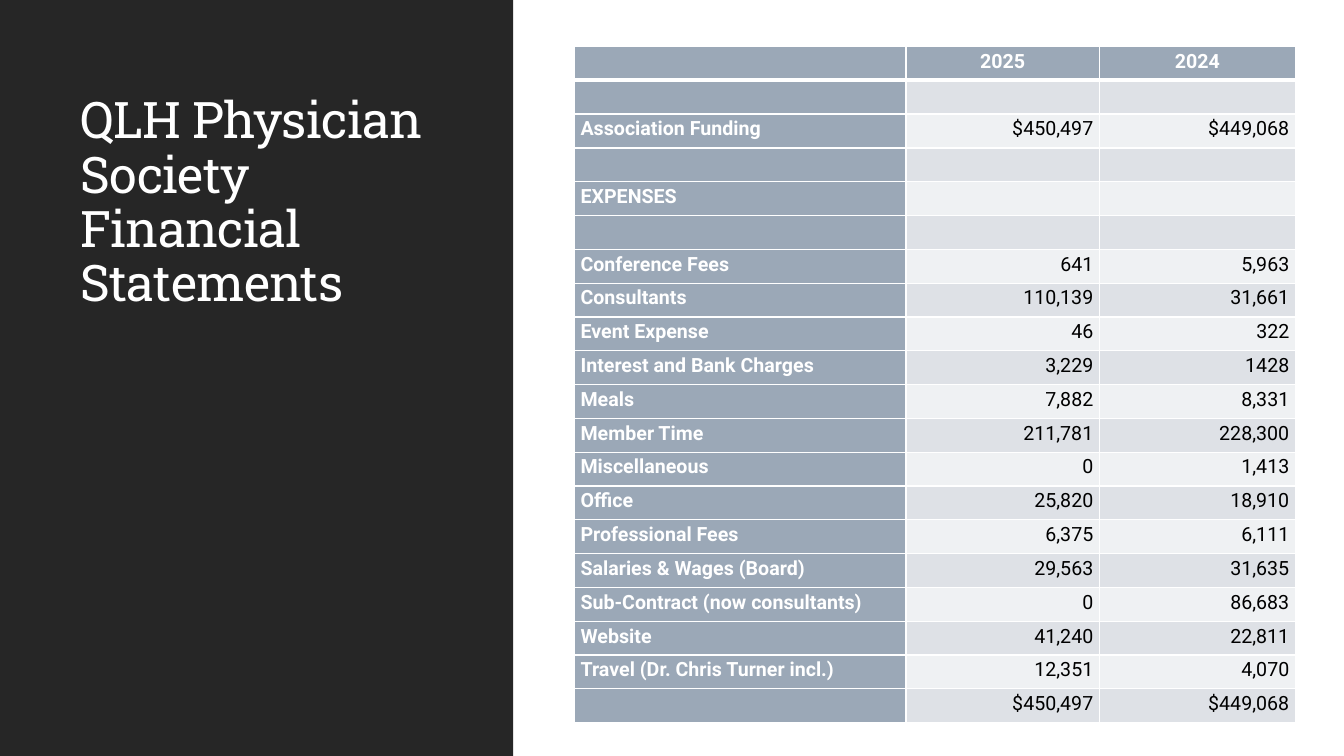
from lxml import etree
from pptx import Presentation
from pptx import util as u
from pptx.dml import color
from pptx.enum import shapes, text
from pptx.oxml import ns

ROWS = [
    ("", "2025", "2024"),
    ("", "", ""),
    ("Association Funding", "$450,497", "$449,068"),
    ("", "", ""),
    ("EXPENSES", "", ""),
    ("", "", ""),
    ("Conference Fees", "641", "5,963"),
    ("Consultants", "110,139", "31,661"),
    ("Event Expense", "46", "322"),
    ("Interest and Bank Charges", "3,229", "1428"),
    ("Meals", "7,882", "8,331"),
    ("Member Time", "211,781", "228,300"),
    ("Miscellaneous", "0", "1,413"),
    ("Office", "25,820", "18,910"),
    ("Professional Fees", "6,375", "6,111"),
    ("Salaries & Wages (Board)", "29,563", "31,635"),
    ("Sub-Contract (now consultants)", "0", "86,683"),
    ("Website", "41,240", "22,811"),
    ("Travel (Dr. Chris Turner incl.)", "12,351", "4,070"),
    ("", "$450,497", "$449,068"),
]


def rgb(value):
    return color.RGBColor.from_string(value)


class Deck:
    dark, white, black = "262626", "FFFFFF", "000000"
    accent, bands = "9BA8B7", ("EFF1F3", "DEE1E6")
    title_font, body_font = "Roboto Slab", "Roboto"

    def __init__(self, prs):
        self.s = prs.slides.add_slide(prs.slide_layouts[6])

    def panel(self, x, y, w, h):
        sp = self.s.shapes.add_shape(
            shapes.MSO_SHAPE.RECTANGLE, u.Pt(x), u.Pt(y), u.Pt(w), u.Pt(h))
        sp.shadow.inherit = False
        sp.fill.solid()
        sp.fill.fore_color.rgb = rgb(self.dark)
        sp.line.fill.background()

    def style(self, p, font, size, fill, bold=False):
        for r in p.runs:
            r.font.name = font
            r.font.size = u.Pt(size)
            r.font.bold = bold
            r.font.color.rgb = rgb(fill)

    def title(self, x, y, w, h, words):
        tf = self.s.shapes.add_textbox(
            u.Pt(x), u.Pt(y), u.Pt(w), u.Pt(h)).text_frame
        tf.word_wrap = True
        tf.vertical_anchor = text.MSO_ANCHOR.BOTTOM
        tf.text = words
        p = tf.paragraphs[0]
        p.line_spacing = 0.9
        p.space_after = u.Pt(6)
        self.style(p, self.title_font, 36, self.white)
        for r in p.runs:
            r.font._element.set("spc", "-50")

    def border(self, cell, side, width):
        tc_pr = cell._tc.get_or_add_tcPr()
        ln = etree.SubElement(tc_pr, ns.qn(f"a:ln{side}"), w=str(u.Pt(width)))
        fill = etree.SubElement(ln, ns.qn("a:solidFill"))
        etree.SubElement(fill, ns.qn("a:srgbClr"), val=self.white)

    def cell(self, cell, words, row, col):
        heading = row == 0 or col == 0
        cell.margin_left = cell.margin_right = u.Pt(4.3)
        cell.margin_top = cell.margin_bottom = 0
        for side in "LRTB":
            self.border(cell, side, 3 if (row, side) == (0, "B") else 1)
        cell.fill.solid()
        cell.fill.fore_color.rgb = rgb(self.accent if heading else self.bands[row % 2])
        if not words:
            return
        cell.text_frame.text = words
        p = cell.text_frame.paragraphs[0]
        p.line_spacing = 1.15
        p.space_after = u.Pt(8)
        if row == 0:
            p.alignment = text.PP_ALIGN.CENTER
        elif col:
            p.alignment = text.PP_ALIGN.RIGHT
        self.style(p, self.body_font, 14,
                   self.white if heading else self.black, heading)

    def table(self, x, y, widths, h, rows):
        tbl = self.s.shapes.add_table(
            len(rows), len(widths), u.Pt(x), u.Pt(y),
            u.Pt(sum(widths)), u.Pt(h)).table
        tbl.first_col = True
        for column, width in zip(tbl.columns, widths):
            column.width = u.Pt(width)
        for i, row in enumerate(rows):
            tbl.rows[i].height = u.Pt(h / len(rows))
            for j, words in enumerate(row):
                self.cell(tbl.cell(i, j), words, i, j)


def main():
    prs = Presentation()
    prs.slide_width, prs.slide_height = u.Pt(960), u.Pt(540)
    deck = Deck(prs)
    deck.panel(0, 0, 366.5, 540)
    deck.title(50.4, 62, 277.2, 165, "QLH Physician Society Financial Statements")
    deck.table(410.4, 33.2, (236.7, 138.2, 140), 483.4, ROWS)
    prs.save("out.pptx")


if __name__ == "__main__":
    main()
